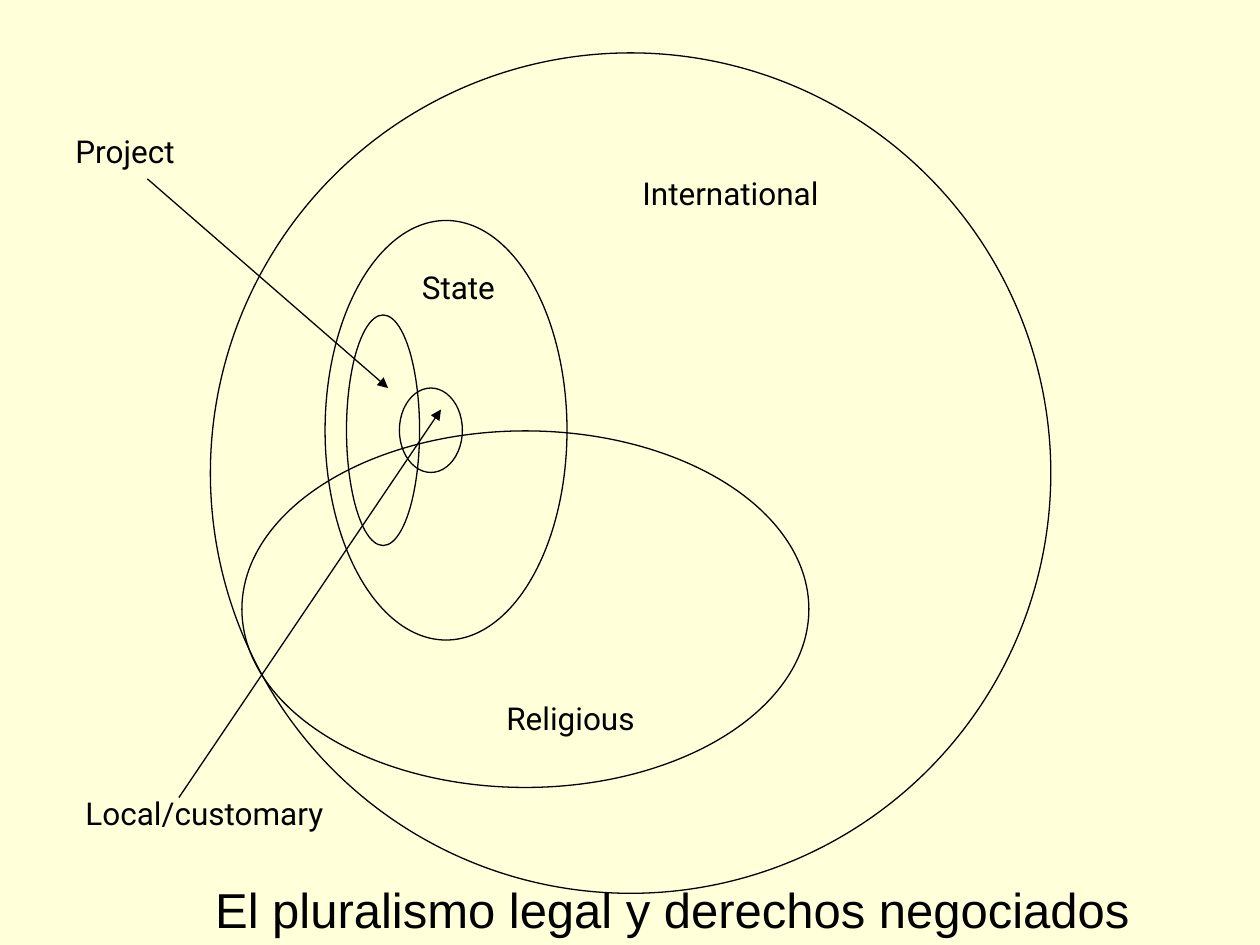
from lxml import etree
from pptx import Presentation
from pptx.dml.color import RGBColor
from pptx.enum.shapes import MSO_CONNECTOR, MSO_SHAPE
from pptx.enum.text import MSO_ANCHOR, MSO_AUTO_SIZE, PP_ALIGN
from pptx.oxml.ns import qn
from pptx.util import Inches, Pt

OVAL = MSO_SHAPE.OVAL
STRAIGHT = MSO_CONNECTOR.STRAIGHT
TOP = MSO_ANCHOR.TOP
LEFT = PP_ALIGN.LEFT
FIT_SHAPE = MSO_AUTO_SIZE.SHAPE_TO_FIT_TEXT

COLORS = {"background": "FFFFD9", "ink": "000000"}
LINE_WIDTH = Pt(0.75)
LABEL_HEIGHT = 0.4
TITLE_LAYOUT = 5

TITLE = " El pluralismo legal y derechos negociados"
TITLE_BOX = (1.5, 6.93, 7.66, 0.57)

# Legal spheres: left, top, width, height
SPHERES = {
    "international": (1.67, 0.42, 6.67, 6.67),
    "religious": (1.92, 3.42, 4.5, 2.83),
    "state": (2.58, 1.75, 1.92, 3.33),
    "project": (2.75, 2.5, 0.58, 1.83),
    "local": (3.17, 3.08, 0.5, 0.67),
}

# Text, left, top, width
LABELS = [
    ("International", 5, 1.33, 1.75),
    ("Religious", 3.92, 5.5, 1.67),
    ("State", 3.25, 2.08, 0.83),
    ("Project", 0.5, 1, 1.08),
    ("Local/customary", 0.58, 6.25, 2.42),
]

# Start and end of the arrow from each outside label
ARROWS = {
    "project": (1.17, 1.42, 3.08, 3.08),
    "local": (1.42, 6.33, 3.5, 3.25),
}


def color(name):
    return RGBColor.from_string(COLORS[name])


def inches(values):
    return [Inches(value) for value in values]


def write_text(shape, text, size=18, font="Roboto", wrap=True):
    frame = shape.text_frame
    frame.word_wrap = wrap
    frame.auto_size = FIT_SHAPE
    frame.vertical_anchor = TOP
    paragraph = frame.paragraphs[0]
    paragraph.alignment = LEFT
    paragraph.line_spacing = 1.0
    paragraph.space_before = Pt(0)
    run = paragraph.add_run()
    run.text = text
    run.font.size = Pt(size)
    run.font.name = font
    run.font.color.rgb = color("ink")


def style_line(shape):
    shape.line.color.rgb = color("ink")
    shape.line.width = LINE_WIDTH


def add_sphere(slide, box):
    sphere = slide.shapes.add_shape(OVAL, *inches(box))
    sphere.shadow.inherit = False
    sphere.fill.background()
    style_line(sphere)


def add_arrow(slide, ends):
    arrow = slide.shapes.add_connector(STRAIGHT, *inches(ends))
    style_line(arrow)
    etree.SubElement(arrow.line._get_or_add_ln(), qn("a:tailEnd"), type="triangle")
    etree.SubElement(arrow._element.spPr, qn("a:effectLst"))


def main():
    presentation = Presentation()
    presentation.slide_width = Inches(10)
    presentation.slide_height = Inches(7.5)
    slide = presentation.slides.add_slide(presentation.slide_layouts[TITLE_LAYOUT])
    slide.background.fill.solid()
    slide.background.fill.fore_color.rgb = color("background")

    title = slide.shapes.title
    title.left, title.top, title.width, title.height = inches(TITLE_BOX)
    write_text(title, TITLE, size=28, font="Arial", wrap=False)

    for box in SPHERES.values():
        add_sphere(slide, box)
    for text, left, top, width in LABELS:
        box = inches((left, top, width, LABEL_HEIGHT))
        write_text(slide.shapes.add_textbox(*box), text)
    for ends in ARROWS.values():
        add_arrow(slide, ends)

    presentation.save("out.pptx")


if __name__ == "__main__":
    main()
